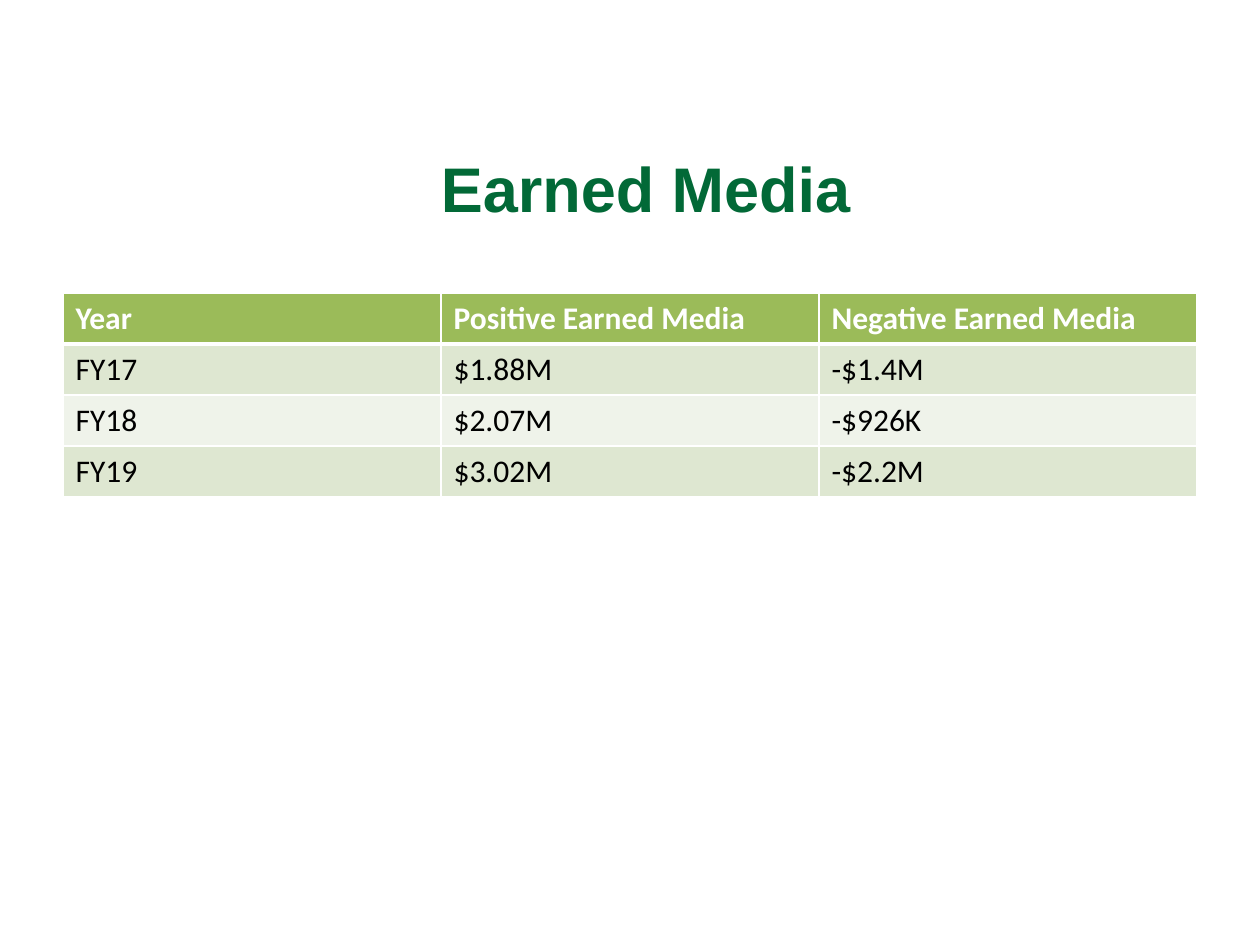
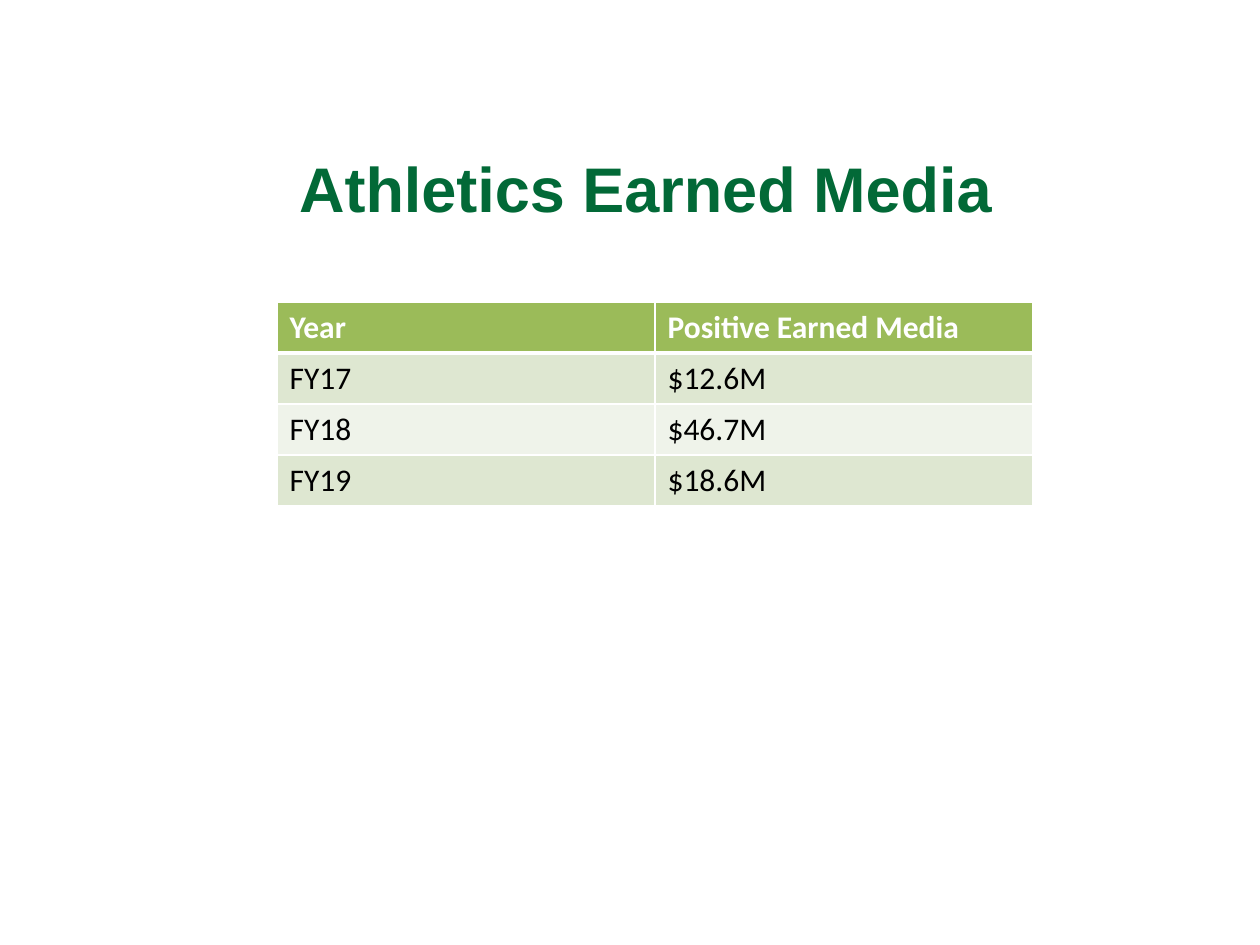
from lxml import etree
from pptx import Presentation
from pptx import util as u
from pptx.dml.color import RGBColor
from pptx.enum import text
from pptx.oxml import ns

SLIDE_WIDTH, SLIDE_HEIGHT = 1260, 945
EMU_PER_INCH, PX_PER_INCH = 914400, 126
COLORS = {
    "title": "026937",
    "header": "9BBB59",
    "odd_row": "DEE7D1",
    "even_row": "EFF3EA",
    "body": "000000",
    "white": "FFFFFF",
}
TITLE_BOX = (88, 135, 1134, 142)
COLUMN_WIDTH, ROW_HEIGHT = 378, 51

EARNED_MEDIA = [
    ("Year", "Positive Earned Media", "Negative Earned Media"),
    ("FY17", "$1.88M", "-$1.4M"),
    ("FY18", "$2.07M", "-$926K"),
    ("FY19", "$3.02M", "-$2.2M"),
]
ATHLETICS_MEDIA = [
    ("Year", "Positive Earned Media"),
    ("FY17", "$12.6M"),
    ("FY18", "$46.7M"),
    ("FY19", "$18.6M"),
]


def px(length):
    return u.Emu(round(length * EMU_PER_INCH / PX_PER_INCH))


def color(name):
    return RGBColor.from_string(COLORS[name])


def add_run(paragraph, content, font_name, size, color_name, bold):
    run = paragraph.add_run()
    run.text = content
    run.font.name = font_name
    run.font.size = u.Pt(size)
    run.font.bold = bold
    run.font.color.rgb = color(color_name)


def add_title(slide, box, content):
    frame = slide.shapes.add_textbox(*map(px, box)).text_frame
    frame.word_wrap = True
    frame.vertical_anchor = text.MSO_ANCHOR.TOP
    frame.margin_top = px(15)
    frame.margin_right = px(31)
    paragraph = frame.paragraphs[0]
    paragraph.alignment = text.PP_ALIGN.CENTER
    add_run(paragraph, content, "Arial", 36, "title", True)


def set_borders(cell, top, bottom):
    properties = cell._tc.get_or_add_tcPr()
    for side, points in (("L", 1), ("R", 1), ("T", top), ("B", bottom)):
        line = etree.SubElement(properties, ns.qn(f"a:ln{side}"), w=str(u.Pt(points)))
        fill = etree.SubElement(line, ns.qn("a:solidFill"))
        etree.SubElement(fill, ns.qn("a:srgbClr"), val=COLORS["white"])


def add_media_table(slide, left, top, rows):
    row_count, column_count = len(rows), len(rows[0])
    box = (left, top, column_count * COLUMN_WIDTH, row_count * ROW_HEIGHT)
    table = slide.shapes.add_table(row_count, column_count, *map(px, box)).table
    for row_index, values in enumerate(rows):
        is_header = row_index == 0
        band = "header" if is_header else "odd_row" if row_index % 2 else "even_row"
        for column_index, value in enumerate(values):
            cell = table.cell(row_index, column_index)
            set_borders(cell, 3 if row_index == 1 else 1, 3 if is_header else 1)
            cell.fill.solid()
            cell.fill.fore_color.rgb = color(band)
            add_run(cell.text_frame.paragraphs[0], value, "Calibri", 18,
                    "white" if is_header else "body", is_header)


def add_media_slide(presentation, title, left, top, rows):
    slide = presentation.slides.add_slide(presentation.slide_layouts[6])
    add_title(slide, TITLE_BOX, title)
    add_media_table(slide, left, top, rows)


def main():
    presentation = Presentation()
    presentation.slide_width = px(SLIDE_WIDTH)
    presentation.slide_height = px(SLIDE_HEIGHT)
    add_media_slide(presentation, "Earned Media", 63, 293, EARNED_MEDIA)
    add_media_slide(presentation, "Athletics Earned Media", 277, 302, ATHLETICS_MEDIA)
    presentation.save("out.pptx")


if __name__ == "__main__":
    main()
